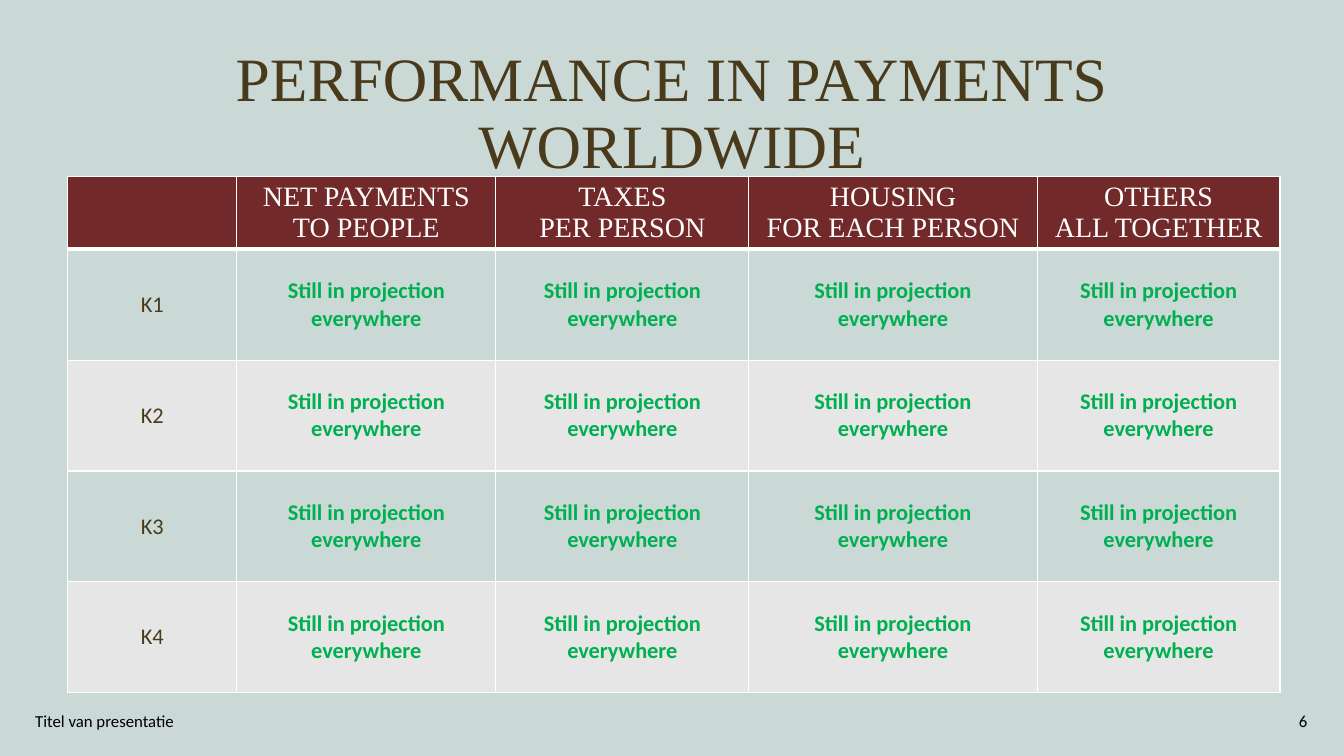
import pptx
import pptx.dml.color
import pptx.enum.text
import pptx.oxml
import pptx.oxml.ns
import pptx.util

Pt = pptx.util.Pt
RGBColor = pptx.dml.color.RGBColor
ALIGN = pptx.enum.text.PP_ALIGN
MIDDLE = pptx.enum.text.MSO_ANCHOR.MIDDLE

SAGE = RGBColor(0xCA, 0xD8, 0xD6)
GREY = RGBColor(0xE7, 0xE6, 0xE6)
MAROON = RGBColor(0x72, 0x29, 0x2A)
BROWN = RGBColor(0x4A, 0x3A, 0x1C)
GREEN = RGBColor(0x00, 0xB0, 0x50)
WHITE = RGBColor(0xFF, 0xFF, 0xFF)
BLACK = RGBColor(0x00, 0x00, 0x00)

SERIF = "Times New Roman"
SANS = "Calibri"

HEADINGS = [
    [],
    ["NET PAYMENTS", "TO PEOPLE"],
    ["TAXES", "PER PERSON"],
    ["HOUSING", "FOR EACH PERSON"],
    ["OTHERS", "ALL TOGETHER"],
]
QUARTERS = ["K1", "K2", "K3", "K4"]
STATUS = "Still in projection everywhere"
COLUMN_WIDTHS = [120.96, 185.04, 180.72, 205.92, 173.52]
HEADER_HEIGHT = 47.52
ROW_HEIGHT = 79.2


def write_lines(frame, lines, size, font, color, align, bold=False):
    """Write each line as its own paragraph."""
    for index, line in enumerate(lines):
        para = frame.add_paragraph() if index else frame.paragraphs[0]
        para.alignment = align
        span = para.add_run()
        span.text = line
        span.font.size = Pt(size)
        span.font.name = font
        span.font.bold = bold
        span.font.color.rgb = color


def add_text(page, left, top, width, height, text, size, font, color, align):
    box = page.shapes.add_textbox(Pt(left), Pt(top), Pt(width), Pt(height))
    frame = box.text_frame
    frame.word_wrap = True
    frame.vertical_anchor = MIDDLE
    write_lines(frame, [text], size, font, color, align)
    return box


def set_borders(cell, bottom_width):
    """Give a cell white borders; they must come before its fill."""
    properties = cell._tc.get_or_add_tcPr()
    widths = {"lnL": 1, "lnR": 1, "lnT": 1, "lnB": bottom_width}
    for position, (side, width) in enumerate(widths.items()):
        border = pptx.oxml.parse_xml(
            f'<a:{side} {pptx.oxml.ns.nsdecls("a")} w="{Pt(width)}">'
            f'<a:solidFill><a:srgbClr val="{WHITE}"/></a:solidFill></a:{side}>'
        )
        properties.insert(position, border)


def style_cell(cell, fill, bottom_width=1):
    cell.vertical_anchor = MIDDLE
    cell.fill.solid()
    cell.fill.fore_color.rgb = fill
    set_borders(cell, bottom_width)


def add_payments_table(page):
    height = HEADER_HEIGHT + ROW_HEIGHT * len(QUARTERS)
    table = page.shapes.add_table(
        len(QUARTERS) + 1, len(HEADINGS),
        Pt(48.24), Pt(126), Pt(sum(COLUMN_WIDTHS)), Pt(height),
    ).table
    for column, width in zip(table.columns, COLUMN_WIDTHS):
        column.width = Pt(width)
    table.rows[0].height = Pt(HEADER_HEIGHT)

    for column, lines in enumerate(HEADINGS):
        cell = table.cell(0, column)
        style_cell(cell, MAROON, bottom_width=3)
        cell.margin_top = cell.margin_bottom = Pt(2)
        write_lines(cell.text_frame, lines, 20, SERIF, WHITE, ALIGN.CENTER)

    for row, quarter in enumerate(QUARTERS, start=1):
        table.rows[row].height = Pt(ROW_HEIGHT)
        for column in range(len(HEADINGS)):
            cell = table.cell(row, column)
            style_cell(cell, SAGE if row % 2 else GREY)
            is_status = column > 0
            write_lines(
                cell.text_frame, [STATUS if is_status else quarter], 16, SANS,
                GREEN if is_status else BROWN, ALIGN.CENTER, bold=is_status,
            )


def main():
    deck = pptx.Presentation()
    deck.slide_width = Pt(960)
    deck.slide_height = Pt(540)
    page = deck.slides.add_slide(deck.slide_layouts[6])
    page.background.fill.solid()
    page.background.fill.fore_color.rgb = SAGE

    title = add_text(page, 66, 30, 828, 104.4, "PERFORMANCE IN PAYMENTS WORLDWIDE",
                     44, SERIF, BROWN, ALIGN.CENTER)
    title.text_frame.paragraphs[0].line_spacing = 0.9
    add_payments_table(page)
    add_text(page, 18, 500.4, 324, 28.8, "Titel van presentatie",
             12, SANS, BLACK, ALIGN.LEFT)
    add_text(page, 725.04, 500.4, 216, 28.8, "6", 12, SANS, BLACK, ALIGN.RIGHT)

    deck.save("out.pptx")


if __name__ == "__main__":
    main()
